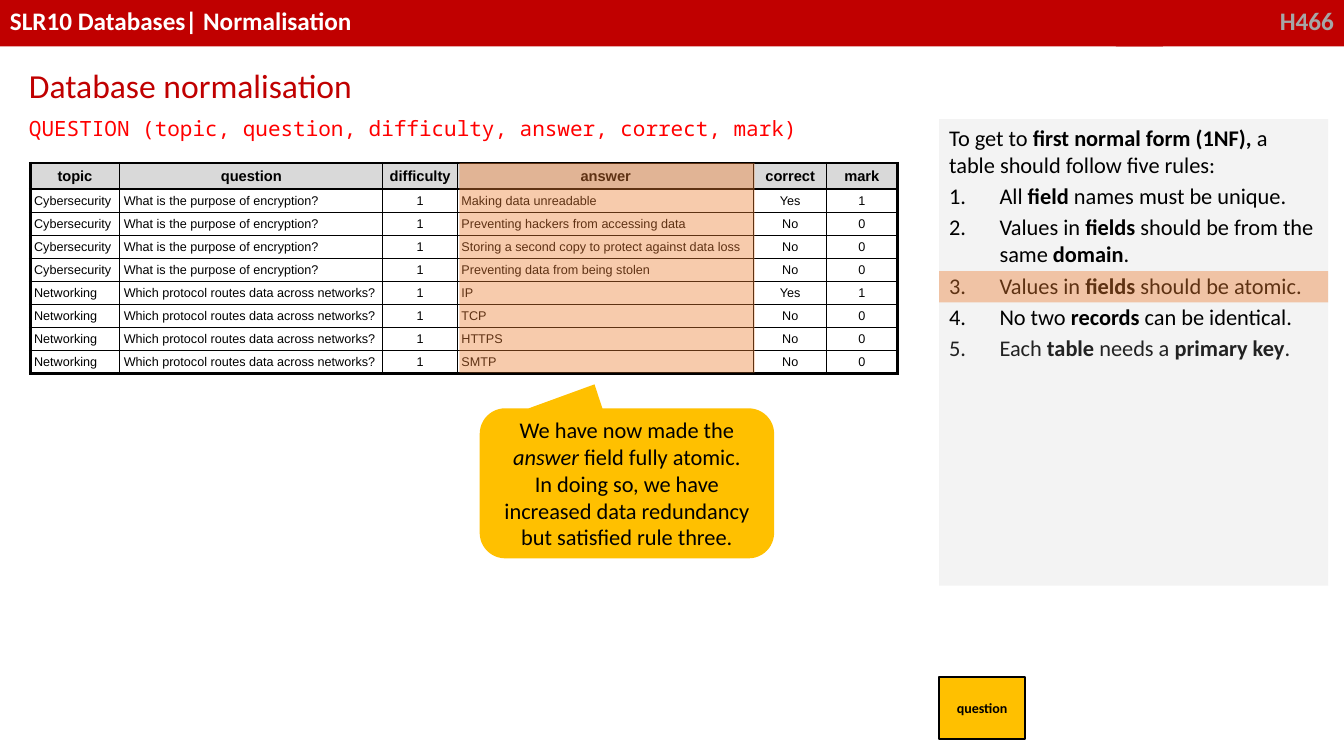
"""Build the database normalisation slide: question table, 1NF rules and callout."""
from dataclasses import dataclass

from lxml.etree import SubElement
from pptx import Presentation
from pptx.dml.color import RGBColor as RGB
from pptx.enum.shapes import MSO_SHAPE as Shape
from pptx.enum.text import MSO_ANCHOR as Anchor, PP_ALIGN as Align
from pptx.oxml.ns import qn
from pptx.util import Cm, Pt


@dataclass(frozen=True)
class Theme:
    red: str = "C00000"
    code_red: str = "FF0000"
    grey: str = "A6A6A6"
    panel: str = "F2F2F2"
    header: str = "D9D9D9"
    orange: str = "ED7D31"
    amber: str = "FFC000"
    white: str = "FFFFFF"
    black: str = "000000"
    dark: str = "222222"
    sans: str = "Calibri"
    table_font: str = "Arial"
    mono: str = "Noto Sans Mono"
    title: float = 24
    bar: float = 18
    body: float = 16
    code: float = 15
    head: float = 10.5
    button: float = 10
    cell: float = 9


theme = Theme()


def add_box(kind, left, top, width, height, fill, opacity=100, line=None):
    """Add a filled shape measured in centimetres."""
    sp = s.shapes.add_shape(kind, Cm(left), Cm(top), Cm(width), Cm(height))
    sp.shadow.inherit = False
    sp.fill.solid()
    sp.fill.fore_color.rgb = RGB.from_string(fill)
    if opacity < 100:
        color = sp.fill._xPr.find(qn("a:solidFill"))[0]
        SubElement(color, qn("a:alpha"), val=str(opacity * 1000))
    if line:
        sp.line.color.rgb = RGB.from_string(theme.black)
        sp.line.width = Pt(line)
    else:
        sp.line.fill.background()
    sp.text_frame.word_wrap = True
    sp.text_frame.vertical_anchor = Anchor.TOP
    return sp


def write(p, text, size, color=theme.black, name=theme.sans, align=Align.LEFT,
          bold=False, emphasis="bold"):
    """Fill a paragraph, giving the emphasis to parts between asterisks."""
    p.alignment = align
    for i, part in enumerate(text.split("*")):
        r = p.add_run()
        r.text = part
        fmt = {"name": name, "size": Pt(size), "bold": bold}
        if i % 2:
            fmt[emphasis] = True
        for key, value in fmt.items():
            setattr(r.font, key, value)
        r.font.color.rgb = RGB.from_string(color)


prs = Presentation()
prs.slide_width, prs.slide_height = Cm(33.87), Cm(19.05)
s = prs.slides.add_slide(prs.slide_layouts[6])

for left, width, text, color, align in (
    (28.12, 5.75, "H466", theme.grey, Align.RIGHT),
    (0, 29.31, "SLR10 Databases| Normalisation", theme.white, Align.LEFT),
):
    sp = add_box(Shape.RECTANGLE, left, 0, width, 1.17, theme.red)
    write(sp.text_frame.paragraphs[0], text, theme.bar, color, align=align, bold=True)

panel_left, panel_width = 23.67, 9.8
rules = [
    "All *field* names must be unique.",
    "Values in *fields* should be from the same *domain*.",
    "Values in *fields* should be atomic.",
    "No two *records* can be identical.",
    "Each *table *needs a *primary key*.",
]
sp = add_box(Shape.RECTANGLE, panel_left, 3, panel_width, 11.76, theme.panel, 90)
tf = sp.text_frame
write(tf.paragraphs[0],
      "To get to *first normal form (1NF), *a table should follow five rules:", theme.body)
for rule in rules:
    p = tf.add_paragraph()
    write(p, rule, theme.body, theme.dark if rule == rules[-1] else theme.black)
    pPr = p._p.get_or_add_pPr()
    pPr.set("marL", str(Cm(1.27)))
    pPr.set("indent", str(-Cm(1.27)))
    SubElement(pPr, qn("a:buFont"), typeface="+mj-lt")
    SubElement(pPr, qn("a:buAutoNum"), type="arabicPeriod")
for p in tf.paragraphs:
    p.space_before = Pt(theme.body * 0.2)

sp = add_box(Shape.RECTANGLE, 0.48, 1.45, 23.44, 1.3, theme.white, 70)
p = sp.text_frame.paragraphs[0]
p.line_spacing = 1.07
write(p, "Database normalisation", theme.title, theme.red)

encryption = ("Cybersecurity", "What is the purpose of encryption?", "1")
routing = ("Networking", "Which protocol routes data across networks?", "1")
rows = [
    ("topic", "question", "difficulty", "answer", "correct", "mark"),
    (*encryption, "Making data unreadable", "Yes", "1"),
    (*encryption, "Preventing hackers from accessing data", "No", "0"),
    (*encryption, "Storing a second copy to protect against data loss", "No", "0"),
    (*encryption, "Preventing data from being stolen", "No", "0"),
    (*routing, "IP", "Yes", "1"),
    (*routing, "TCP", "No", "0"),
    (*routing, "HTTPS", "No", "0"),
    (*routing, "SMTP", "No", "0"),
]
col_widths = [2.26, 6.63, 1.88, 7.47, 1.83, 1.78]
row_heights = [0.66] + [0.58] * 8
col_edges = [2.25] + [1] * 5 + [2.25]
row_edges = [2.25, 1.5] + [1] * 7 + [2.25]
left_columns = {0, 1, 3}

table = s.shapes.add_table(len(rows), len(col_widths), Cm(0.76), Cm(4.11),
                           Cm(sum(col_widths)), Cm(sum(row_heights))).table
table.first_row = table.horz_banding = False
for column, width in zip(table.columns, col_widths):
    column.width = Cm(width)
for i, (row, height) in enumerate(zip(rows, row_heights)):
    table.rows[i].height = Cm(height)
    for j, text in enumerate(row):
        cell = table.cell(i, j)
        is_head = i == 0
        fmt = dict.fromkeys(("margin_left", "margin_right", "margin_top", "margin_bottom"), Cm(0.1))
        fmt["vertical_anchor"] = Anchor.MIDDLE
        for key, value in fmt.items():
            setattr(cell, key, value)
        tcPr = cell._tc.get_or_add_tcPr()
        edges = {"L": col_edges[j], "R": col_edges[j + 1],
                 "T": row_edges[i], "B": row_edges[i + 1]}
        for side, weight in edges.items():
            ln = SubElement(tcPr, qn(f"a:ln{side}"), w=str(Pt(weight)))
            SubElement(SubElement(ln, qn("a:solidFill")), qn("a:srgbClr"), val=theme.black)
        if is_head:
            cell.fill.solid()
            cell.fill.fore_color.rgb = RGB.from_string(theme.header)
        else:
            cell.fill.background()
        write(cell.text_frame.paragraphs[0], text, theme.head if is_head else theme.cell,
              name=theme.table_font, bold=is_head,
              align=Align.LEFT if j in left_columns and not is_head else Align.CENTER)

add_box(Shape.RECTANGLE, panel_left, 6.83, panel_width, 0.79, theme.orange, 40)
add_box(Shape.RECTANGLE, 11.58, 4.11, 7.44, 5.28, theme.orange, 40)

tf = s.shapes.add_textbox(Cm(0.48), Cm(2.79), Cm(22.28), Cm(0.89)).text_frame
tf.word_wrap = True
write(tf.paragraphs[0], "QUESTION (topic, question, difficulty, answer, correct, mark)",
      theme.code, theme.code_red, theme.mono)

sp = add_box(Shape.RECTANGLE, panel_left, 17.07, 2.16, 1.55, theme.amber, line=1.5)
sp.text_frame.vertical_anchor = Anchor.MIDDLE
write(sp.text_frame.paragraphs[0], "question", theme.button, align=Align.CENTER, bold=True)

sp = add_box(Shape.ROUNDED_RECTANGULAR_CALLOUT, 12.09, 10.29, 7.42, 3.78, theme.amber)
for i, value in enumerate((-0.11, -0.66, 0.17)):
    sp.adjustments[i] = value
tf = sp.text_frame
tf.vertical_anchor = Anchor.MIDDLE
write(tf.paragraphs[0], "We have now made the *answer* field fully atomic.", theme.body,
      align=Align.CENTER, emphasis="italic")
write(tf.add_paragraph(),
      "In doing so, we have increased data redundancy but satisfied rule three.",
      theme.body, align=Align.CENTER)

prs.save("out.pptx")
